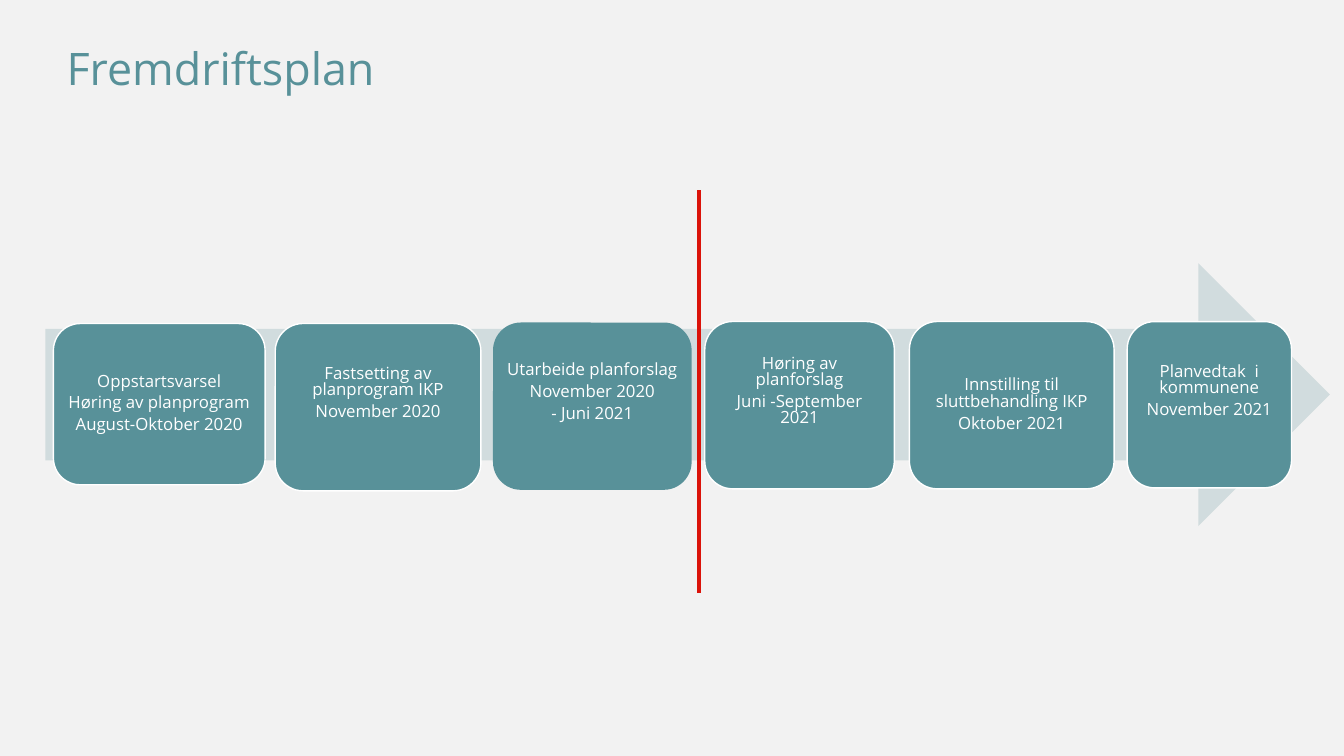
from dataclasses import dataclass

from lxml import etree
from pptx import Presentation
from pptx.dml.color import RGBColor
from pptx.enum.shapes import MSO_CONNECTOR, MSO_SHAPE
from pptx.enum.text import MSO_ANCHOR, PP_ALIGN
from pptx.oxml.ns import qn
from pptx.util import Inches, Pt

ARROW = MSO_SHAPE.RIGHT_ARROW
ROUNDED = MSO_SHAPE.ROUNDED_RECTANGLE
STRAIGHT = MSO_CONNECTOR.STRAIGHT
TOP, MIDDLE = MSO_ANCHOR.TOP, MSO_ANCHOR.MIDDLE
LEFT, CENTER = PP_ALIGN.LEFT, PP_ALIGN.CENTER


@dataclass(frozen=True)
class Theme:
    font: str = "Open Sans"
    background: RGBColor = RGBColor(0xF2, 0xF2, 0xF2)
    teal: RGBColor = RGBColor(0x58, 0x91, 0x99)
    pale: RGBColor = RGBColor(0xD1, 0xDC, 0xDE)
    white: RGBColor = RGBColor(0xFF, 0xFF, 0xFF)
    red: RGBColor = RGBColor(0xDB, 0x13, 0x0A)
    title_size: Pt = Pt(32)
    step_size: Pt = Pt(12)


THEME = Theme()
INSET = 0.05
RAISED = 0.26  # extra bottom inset that lifts the text by half a line

# left, top, width, height, outlined, extra bottom inset, paragraphs
STEPS = [
    (0.53, 3.21, 2.1, 1.6, True, 0,
     ["Oppstartsvarsel", "Høring av planprogram", "August-Oktober 2020"]),
    (2.73, 3.21, 2.04, 1.66, True, RAISED,
     ["Fastsetting av planprogram IKP", "November 2020"]),
    (4.89, 3.2, 1.97, 1.66, False, RAISED,
     ["Utarbeide planforslag", "November 2020", "- Juni 2021"]),
    (6.99, 3.19, 1.88, 1.66, True, RAISED,
     ["Høring av planforslag", "Juni -September 2021"]),
    (9.02, 3.19, 2.03, 1.66, True, 0,
     ["Innstilling til sluttbehandling IKP", "Oktober 2021"]),
    (11.18, 3.19, 1.63, 1.65, True, RAISED,
     ["Planvedtak  i kommunene", "November 2021"]),
]


def set_font(paragraph, size, color):
    paragraph.font.name = THEME.font
    paragraph.font.size = size
    paragraph.font.color.rgb = color


def set_frame(frame, anchor, inset, extra_bottom=0):
    frame.word_wrap = True
    frame.vertical_anchor = anchor
    frame.margin_left = frame.margin_right = frame.margin_top = Inches(inset)
    frame.margin_bottom = Inches(inset + extra_bottom)


def fill_title(slide, text):
    title = slide.shapes.title
    title.left, title.top = Inches(0.66), Inches(0.4)
    title.width, title.height = Inches(12.01), Inches(0.87)
    title.text_frame.text = text
    set_frame(title.text_frame, TOP, 0)
    paragraph = title.text_frame.paragraphs[0]
    paragraph.alignment = LEFT
    set_font(paragraph, THEME.title_size, THEME.teal)


def add_filled_shape(slide, kind, left, top, width, height, color):
    shape = slide.shapes.add_shape(
        kind, Inches(left), Inches(top), Inches(width), Inches(height))
    shape.shadow.inherit = False
    shape.fill.solid()
    shape.fill.fore_color.rgb = color
    shape.line.fill.background()
    return shape


def add_step(slide, left, top, width, height, outlined, extra_bottom, texts):
    box = add_filled_shape(slide, ROUNDED, left, top, width, height, THEME.teal)
    if outlined:
        box.line.color.rgb = THEME.white
        box.line.width = Pt(1)
    frame = box.text_frame
    set_frame(frame, MIDDLE, INSET, extra_bottom)
    frame.text = "\n".join(texts)
    for paragraph in frame.paragraphs:
        paragraph.alignment = CENTER
        paragraph.line_spacing = 0.8
        paragraph.space_after = Pt(4.2)
        set_font(paragraph, THEME.step_size, THEME.white)


def add_status_line(slide, x, top, bottom):
    line = slide.shapes.add_connector(
        STRAIGHT, Inches(x), Inches(top), Inches(x), Inches(bottom))
    line.line.color.rgb = THEME.red
    line.line.width = Pt(3)
    etree.SubElement(line._element.spPr, qn("a:effectLst"))


def main():
    presentation = Presentation()
    presentation.slide_width = Inches(13.33)
    presentation.slide_height = Inches(7.5)
    slide = presentation.slides.add_slide(presentation.slide_layouts[5])
    slide.background.fill.solid()
    slide.background.fill.fore_color.rgb = THEME.background

    fill_title(slide, "Fremdriftsplan")
    add_filled_shape(slide, ARROW, 0.45, 2.61, 12.74, 2.61, THEME.pale)
    for step in STEPS:
        add_step(slide, *step)
    add_status_line(slide, 6.93, 1.89, 5.88)
    presentation.save("out.pptx")


if __name__ == "__main__":
    main()
